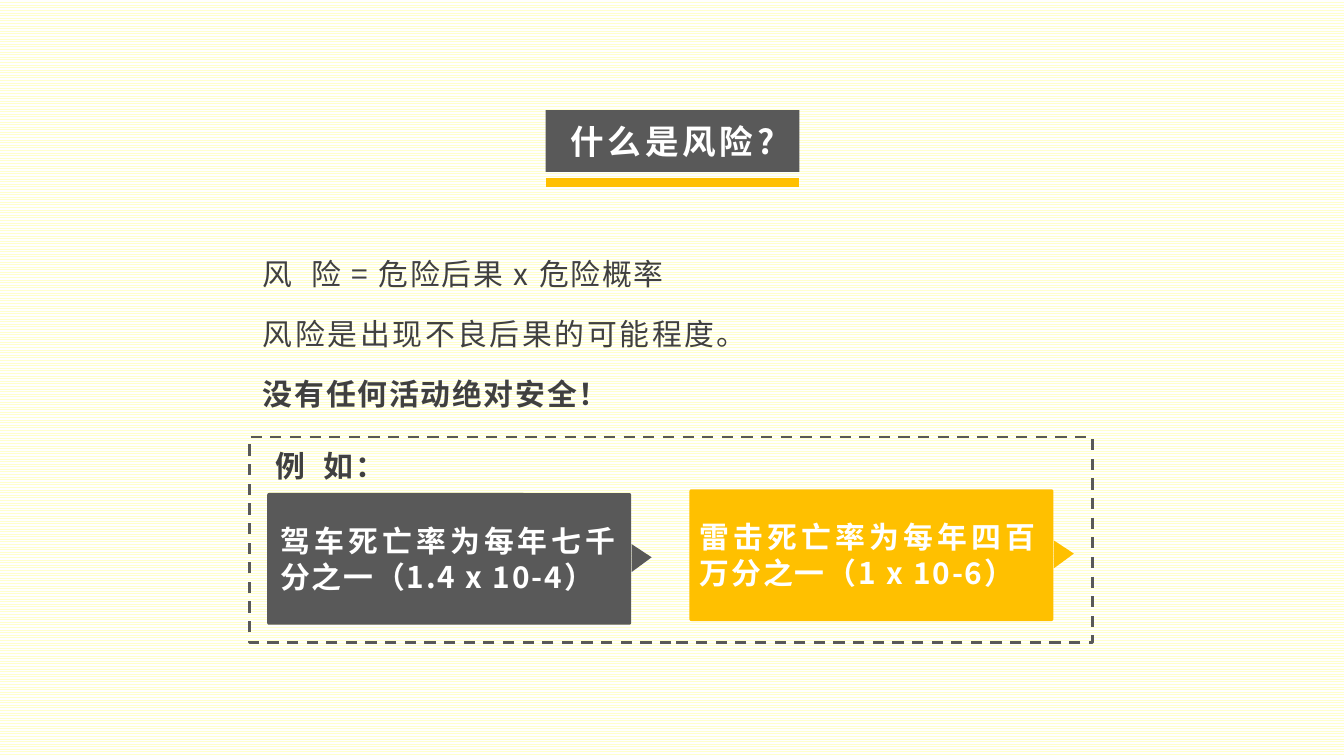
from lxml import etree
from pptx import Presentation
from pptx import util as u
from pptx.dml.color import RGBColor
from pptx.enum import dml, shapes, text
from pptx.oxml.ns import qn

Cm = u.Cm
COLORS = {"dark": "595959", "amber": "FFC000", "body": "404040",
          "white": "FFFFFF", "stripe": "FFFFCC"}
FONT = "Noto Sans CJK SC"


def color(name):
    return RGBColor.from_string(COLORS[name])


class RiskSlide:
    def __init__(self, deck):
        self.slide = deck.slides.add_slide(deck.slide_layouts[5])
        self.shapes = self.slide.shapes

    def background(self, stripe, base):
        fill = self.slide.background.fill
        fill.patterned()
        fill.pattern = dml.MSO_PATTERN.LIGHT_HORIZONTAL
        fill.fore_color.rgb = color(stripe)
        fill.back_color.rgb = color(base)

    def set_text(self, frame, words, ink, size=16, bold=False, spacing=1,
                 align=text.PP_ALIGN.JUSTIFY):
        frame.word_wrap = True
        paragraph = frame.paragraphs[0]
        paragraph.alignment = align
        run = paragraph.add_run()
        run.text = words
        for name, value in {"name": FONT, "size": u.Pt(size), "bold": bold}.items():
            setattr(run.font, name, value)
        run.font.color.rgb = color(ink)
        props = run._r.get_or_add_rPr()
        props.set("lang", "zh-CN")
        props.set("spc", str(spacing * 100))
        props.find(qn("a:latin")).addnext(
            props.makeelement(qn("a:ea"), {"typeface": FONT}))

    def title(self, words, left, top, width, height):
        heading = self.shapes.title
        box = {"left": left, "top": top, "width": width, "height": height}
        for name, value in box.items():
            setattr(heading, name, Cm(value))
        heading.fill.solid()
        heading.fill.fore_color.rgb = color("dark")
        frame = heading.text_frame
        frame_format = {"margin_left": Cm(0.3), "margin_right": Cm(0.3),
                        "margin_top": Cm(0.2), "margin_bottom": Cm(0.2),
                        "vertical_anchor": text.MSO_ANCHOR.MIDDLE,
                        "auto_size": text.MSO_AUTO_SIZE.NONE}
        for name, value in frame_format.items():
            setattr(frame, name, value)
        self.set_text(frame, words, "white", 18, True, 2, text.PP_ALIGN.CENTER)

    def label(self, words, left, top, width, height, ink="body", bold=False):
        box = self.shapes.add_textbox(Cm(left), Cm(top), Cm(width), Cm(height))
        self.set_text(box.text_frame, words, ink, bold=bold)

    def rule(self, left, right, y, ink, weight):
        line = self.shapes.add_connector(
            shapes.MSO_CONNECTOR.STRAIGHT, Cm(left), Cm(y), Cm(right), Cm(y))
        line.line.color.rgb = color(ink)
        line.line.width = u.Pt(weight)
        etree.SubElement(line._element.spPr, qn("a:effectLst"))

    def block(self, kind, left, top, width, height, fill, adjust, rotation=0):
        block = self.shapes.add_shape(kind, Cm(left), Cm(top), Cm(width), Cm(height))
        block.shadow.inherit = False
        block.adjustments[0] = adjust
        block.rotation = rotation
        block.fill.solid()
        block.fill.fore_color.rgb = color(fill)
        block.line.fill.background()

    def card(self, words, left, top, fill, text_shift):
        """Add a filled card with a pointer on its right side."""
        self.block(shapes.MSO_SHAPE.ROUNDED_RECTANGLE, left, top, 6.88, 2.49, fill, 0.016)
        self.block(shapes.MSO_SHAPE.ISOSCELES_TRIANGLE, left + 6.81, top + 1.04,
                   0.53, 0.38, fill, 0.472, 90)
        self.label(words, left + text_shift, top + 0.43, 6.88, 1.63, "white", True)

    def dashed_frame(self, left, top, width, height):
        frame = self.shapes.add_shape(shapes.MSO_SHAPE.RECTANGLE, Cm(left), Cm(top),
                                      Cm(width), Cm(height))
        frame.shadow.inherit = False
        frame.fill.background()
        frame.line.color.rgb = color("dark")
        frame.line.width = u.Pt(1.5)
        frame.line.dash_style = dml.MSO_LINE.DASH


def main():
    deck = Presentation()
    deck.slide_width, deck.slide_height = Cm(25.4), Cm(14.29)
    risk = RiskSlide(deck)
    risk.background("stripe", "white")
    risk.title("什么是风险?", 10.31, 2.08, 4.8, 1.17)
    risk.rule(10.31, 15.1, 3.45, "amber", 5)

    statements = [("风  险 = 危险后果 x 危险概率", False),
                  ("风险是出现不良后果的可能程度。", False),
                  ("没有任何活动绝对安全！", True)]
    for row, (statement, bold) in enumerate(statements):
        risk.label(statement, 4.72, 4.7 + row * 1.14, 9.09, 0.94, bold=bold)

    risk.label("例  如：", 4.95, 8.33, 9.09, 0.94, bold=True)
    risk.card("驾车死亡率为每年七千分之一（1.4 x 10-4）", 5.05, 9.32, "dark", 0)
    risk.card("雷击死亡率为每年四百万分之一（1 x 10-6）", 13.03, 9.25, "amber", -0.05)
    risk.dashed_frame(4.72, 8.26, 15.93, 3.89)
    deck.save("out.pptx")


if __name__ == "__main__":
    main()
